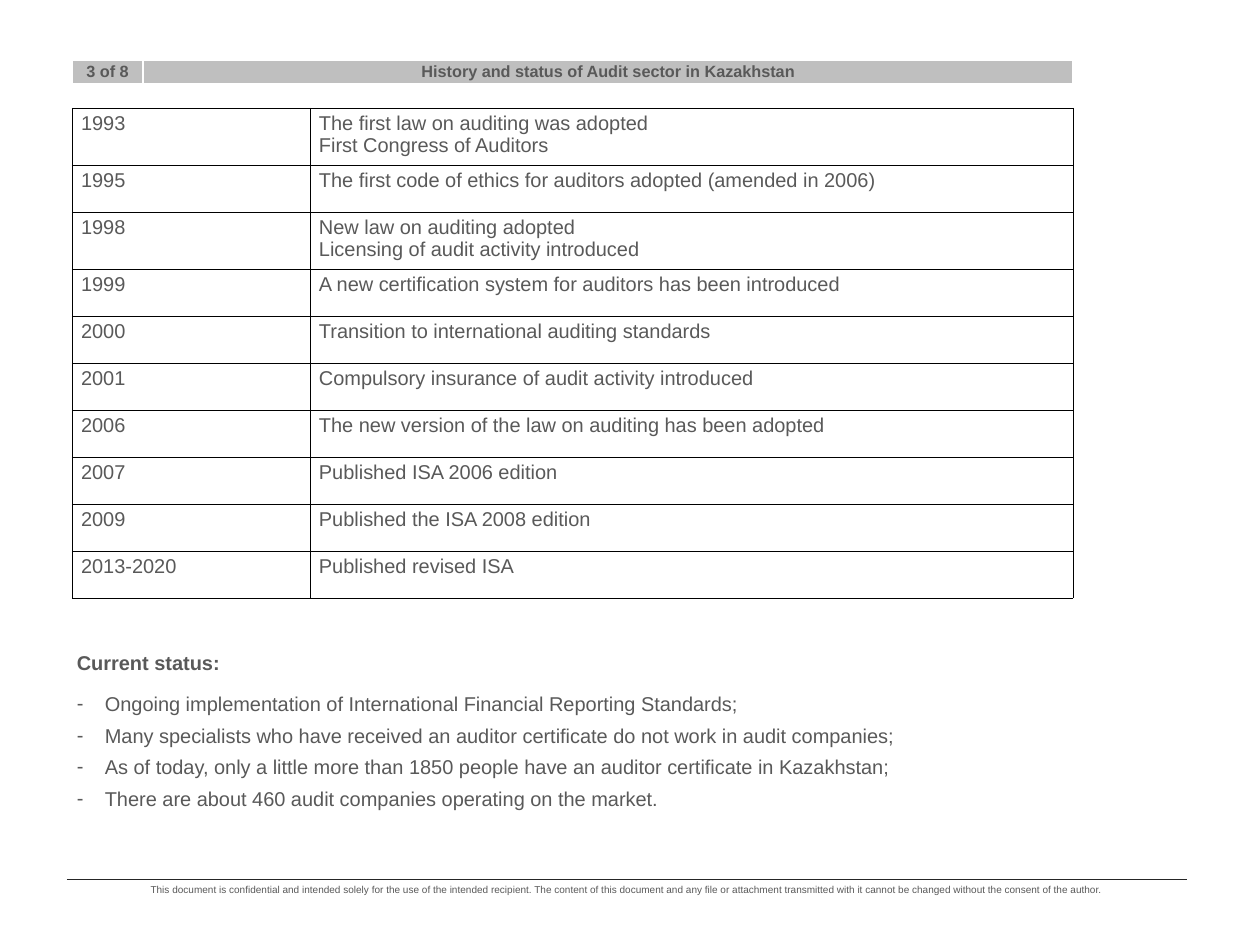
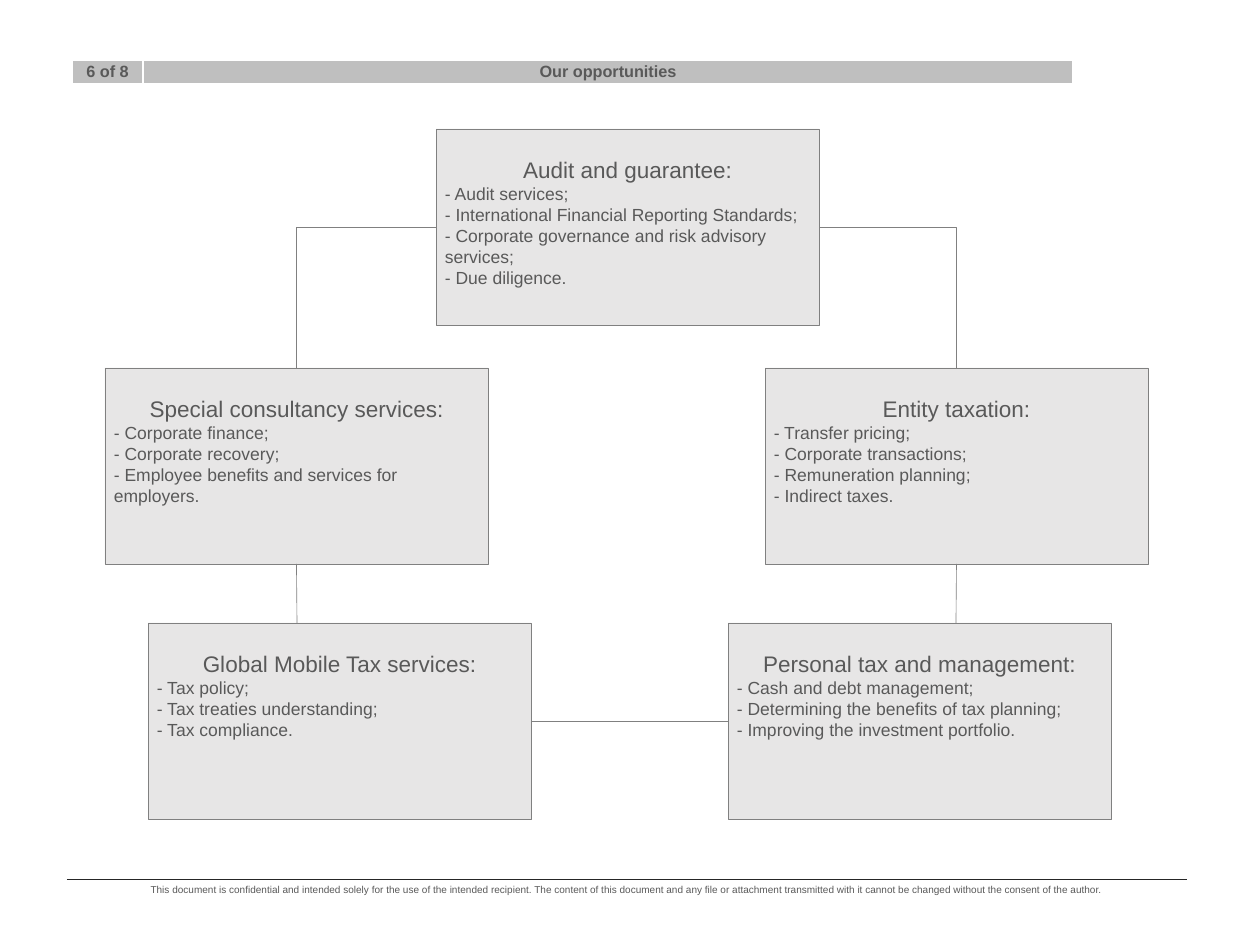
from dataclasses import dataclass
from typing import NamedTuple, Optional

from lxml.etree import SubElement
from pptx import Presentation
from pptx.dml.color import RGBColor
from pptx.enum.shapes import MSO_CONNECTOR, MSO_SHAPE
from pptx.enum.text import MSO_ANCHOR, MSO_AUTO_SIZE, PP_ALIGN
from pptx.oxml.ns import qn
from pptx.util import Pt

EMU_PER_PX = 10160
TOP, LEFT, BOTTOM, RIGHT = range(4)


@dataclass(frozen=True)
class Theme:
    font: str = "Arial"
    ink: str = "595959"
    band: str = "BFBFBF"
    band_border: str = "FFFFFF"
    grid: str = "000000"
    card: str = "E7E6E6"
    outline: str = "808080"
    footer_rule: str = "262626"
    band_size: int = 13
    body_size: int = 16
    card_title_size: int = 18
    card_item_size: int = 14
    footer_size: int = 8
    hairline: float = 0.25
    thin: float = 0.5
    band_line: float = 1


THEME = Theme()


class Box(NamedTuple):
    left: int
    top: int
    width: int
    height: int


class Milestone(NamedTuple):
    year: str
    events: tuple[str, ...]


@dataclass(frozen=True)
class Service:
    title: str
    items: tuple[str, ...]
    left: int
    top: int
    width: int = 383
    height: int = 196

    def site(self, side: int) -> tuple[int, int]:
        middle_x = self.left + self.width // 2
        middle_y = self.top + self.height // 2
        return {
            TOP: (middle_x, self.top),
            LEFT: (self.left, middle_y),
            BOTTOM: (middle_x, self.top + self.height),
            RIGHT: (self.left + self.width, middle_y),
        }[side]


class Link(NamedTuple):
    start: str
    start_side: int
    end: str
    end_side: int
    bent: bool = False
    loose_end: Optional[tuple[int, int]] = None


BAND = Box(72, 60, 1001, 24)
BAND_COLUMNS = (71, 930)
TIMELINE = Box(72, 108, 1001, 470)
TIMELINE_COLUMNS = (238, 763)
STATUS = Box(68, 646, 1005, 169)
FOOTER = Box(67, 879, 1120, 22)
CARD_TOP_MARGIN = 27
BULLET_INDENT = 28

CONFIDENTIALITY = (
    "This document is confidential and intended solely for the use of the intended recipient. "
    "The content of this document and any file or attachment transmitted with it "
    "cannot be changed without the consent of the author."
)

MILESTONES = (
    Milestone("1993", ("The first law on auditing was adopted", "First Congress of Auditors")),
    Milestone("1995", ("The first code of ethics for auditors adopted (amended in 2006)",)),
    Milestone("1998", ("New law on auditing adopted", "Licensing of audit activity introduced")),
    Milestone("1999", ("A new certification system for auditors has been introduced",)),
    Milestone("2000", ("Transition to international auditing standards",)),
    Milestone("2001", ("Compulsory insurance of audit activity introduced",)),
    Milestone("2006", ("The new version of the law on auditing has been adopted",)),
    Milestone("2007", ("Published ISA 2006 edition",)),
    Milestone("2009", ("Published the ISA 2008 edition",)),
    Milestone("2013-2020", ("Published revised ISA",)),
)

STATUS_POINTS = (
    "Ongoing implementation of International Financial Reporting Standards;",
    "Many specialists who have received an auditor certificate do not work in audit companies;",
    "As of today, only a little more than 1850 people have an auditor certificate in Kazakhstan;",
    "There are about 460 audit companies operating on the market.",
)

SERVICES = {
    "audit": Service("Audit and guarantee:", (
        "- Audit services;",
        "- International Financial Reporting Standards;",
        "- Corporate governance and risk advisory services;",
        "- Due diligence.",
    ), 436, 129),
    "taxation": Service("Entity taxation:", (
        "- Transfer pricing;",
        "- Corporate transactions;",
        "- Remuneration planning;",
        "- Indirect taxes.",
    ), 765, 368),
    "consultancy": Service("Special consultancy services:", (
        "- Corporate finance;",
        "- Corporate recovery;",
        "- Employee benefits and services for employers.",
    ), 105, 368),
    "mobile": Service("Global Mobile Tax services:", (
        "- Tax policy;",
        "- Tax treaties understanding;",
        "- Tax compliance.",
    ), 148, 623),
    "personal": Service("Personal tax and management:", (
        "- Cash and debt management;",
        "- Determining the benefits of tax planning;",
        "- Improving the investment portfolio.",
    ), 728, 623),
}

LINKS = (
    Link("audit", RIGHT, "taxation", TOP, bent=True),
    Link("audit", LEFT, "consultancy", TOP, bent=True),
    Link("consultancy", BOTTOM, "mobile", TOP, loose_end=(297, 623)),
    Link("taxation", BOTTOM, "personal", TOP, loose_end=(956, 623)),
    Link("mobile", RIGHT, "personal", LEFT),
)


def px(length: int) -> int:
    return length * EMU_PER_PX


def rgb(color: str) -> RGBColor:
    return RGBColor.from_string(color)


def write_line(frame, index: int, text: str, size: int, bold: bool = False, align=PP_ALIGN.LEFT):
    paragraph = frame.add_paragraph() if index else frame.paragraphs[0]
    paragraph.alignment = align
    run = paragraph.add_run()
    run.text = text
    run.font.name = THEME.font
    run.font.size = Pt(size)
    run.font.bold = bold
    run.font.color.rgb = rgb(THEME.ink)
    return paragraph


def add_text_box(slide, box: Box):
    frame = slide.shapes.add_textbox(*map(px, box)).text_frame
    frame.word_wrap = True
    frame.auto_size = MSO_AUTO_SIZE.SHAPE_TO_FIT_TEXT
    return frame


def add_link_line(slide, start, end, color: str, bent: bool = False):
    kind = MSO_CONNECTOR.ELBOW if bent else MSO_CONNECTOR.STRAIGHT
    line = slide.shapes.add_connector(kind, *map(px, (*start, *end)))
    line.line.color.rgb = rgb(color)
    line.line.width = Pt(THEME.thin)
    properties = line._element.spPr
    SubElement(properties, qn("a:effectLst"))
    if bent:
        properties.find(qn("a:prstGeom")).set("prst", "bentConnector2")
    return line


def border_cell(cell, color: str, width: float) -> None:
    properties = cell._tc.get_or_add_tcPr()
    for edge in ("lnL", "lnR", "lnT", "lnB"):
        border = SubElement(properties, qn(f"a:{edge}"), w=str(Pt(width)))
        fill = SubElement(border, qn("a:solidFill"))
        SubElement(fill, qn("a:srgbClr"), val=color)


def add_grid(slide, box: Box, columns: tuple[int, ...], rows: int, border: str, width: float):
    grid = slide.shapes.add_table(rows, len(columns), *map(px, box)).table
    grid.first_row = grid.horz_banding = False
    for column, column_width in zip(grid.columns, columns):
        column.width = px(column_width)
    for cell in grid.iter_cells():
        border_cell(cell, border, width)
        cell.fill.background()
    return grid


def add_band(slide, page: str, title: str) -> None:
    band = add_grid(slide, BAND, BAND_COLUMNS, 1, THEME.band_border, THEME.band_line)
    for cell, text in zip(band.iter_cells(), (page, title)):
        cell.fill.solid()
        cell.fill.fore_color.rgb = rgb(THEME.band)
        cell.vertical_anchor = MSO_ANCHOR.MIDDLE
        cell.margin_left = cell.margin_right = cell.margin_top = cell.margin_bottom = 0
        write_line(cell.text_frame, 0, text, THEME.band_size, True, PP_ALIGN.CENTER)


def add_footer(slide) -> None:
    start = (FOOTER.left, FOOTER.top)
    end = (FOOTER.left + FOOTER.width, FOOTER.top)
    add_link_line(slide, start, end, THEME.footer_rule)
    notice = add_text_box(slide, FOOTER)
    write_line(notice, 0, CONFIDENTIALITY, THEME.footer_size, align=PP_ALIGN.CENTER)


def add_page(deck, page: str, title: str):
    slide = deck.slides.add_slide(deck.slide_layouts[6])
    add_band(slide, page, title)
    add_footer(slide)
    return slide


def add_timeline(slide) -> None:
    timeline = add_grid(
        slide, TIMELINE, TIMELINE_COLUMNS, len(MILESTONES), THEME.grid, THEME.hairline
    )
    for row, milestone in enumerate(MILESTONES):
        write_line(timeline.cell(row, 0).text_frame, 0, milestone.year, THEME.body_size)
        for index, event in enumerate(milestone.events):
            write_line(timeline.cell(row, 1).text_frame, index, event, THEME.body_size)


def add_status(slide) -> None:
    status = add_text_box(slide, STATUS)
    write_line(status, 0, "Current status:", THEME.body_size, True)
    for index, point in enumerate(STATUS_POINTS, 1):
        paragraph = write_line(status, index, point, THEME.body_size)
        paragraph.space_before = Pt(14 if index == 1 else 6)
        properties = paragraph._p.get_or_add_pPr()
        properties.set("marL", str(px(BULLET_INDENT)))
        properties.set("indent", str(-px(BULLET_INDENT)))
        SubElement(properties, qn("a:buFont"), typeface=THEME.font)
        SubElement(properties, qn("a:buChar"), char="-")


def add_service(slide, service: Service):
    box = Box(service.left, service.top, service.width, service.height)
    card = slide.shapes.add_shape(MSO_SHAPE.RECTANGLE, *map(px, box))
    card.shadow.inherit = False
    card.fill.solid()
    card.fill.fore_color.rgb = rgb(THEME.card)
    card.line.color.rgb = rgb(THEME.outline)
    card.line.width = Pt(THEME.hairline)
    frame = card.text_frame
    frame.word_wrap = True
    frame.vertical_anchor = MSO_ANCHOR.TOP
    frame.margin_top = px(CARD_TOP_MARGIN)
    write_line(frame, 0, service.title, THEME.card_title_size, align=PP_ALIGN.CENTER)
    for index, item in enumerate(service.items, 1):
        write_line(frame, index, item, THEME.card_item_size)
    return card


def add_opportunities(slide) -> None:
    cards = {key: add_service(slide, service) for key, service in SERVICES.items()}
    for link in LINKS:
        start = SERVICES[link.start].site(link.start_side)
        end = link.loose_end or SERVICES[link.end].site(link.end_side)
        line = add_link_line(slide, start, end, THEME.outline, link.bent)
        line.begin_connect(cards[link.start], link.start_side)
        if not link.loose_end:
            line.end_connect(cards[link.end], link.end_side)


def main() -> None:
    deck = Presentation()
    deck.slide_width, deck.slide_height = px(1260), px(945)
    history = add_page(deck, "3 of 8", "History and status of Audit sector in Kazakhstan")
    add_timeline(history)
    add_status(history)
    add_opportunities(add_page(deck, "6 of 8", "Our opportunities"))
    deck.save("out.pptx")


if __name__ == "__main__":
    main()
